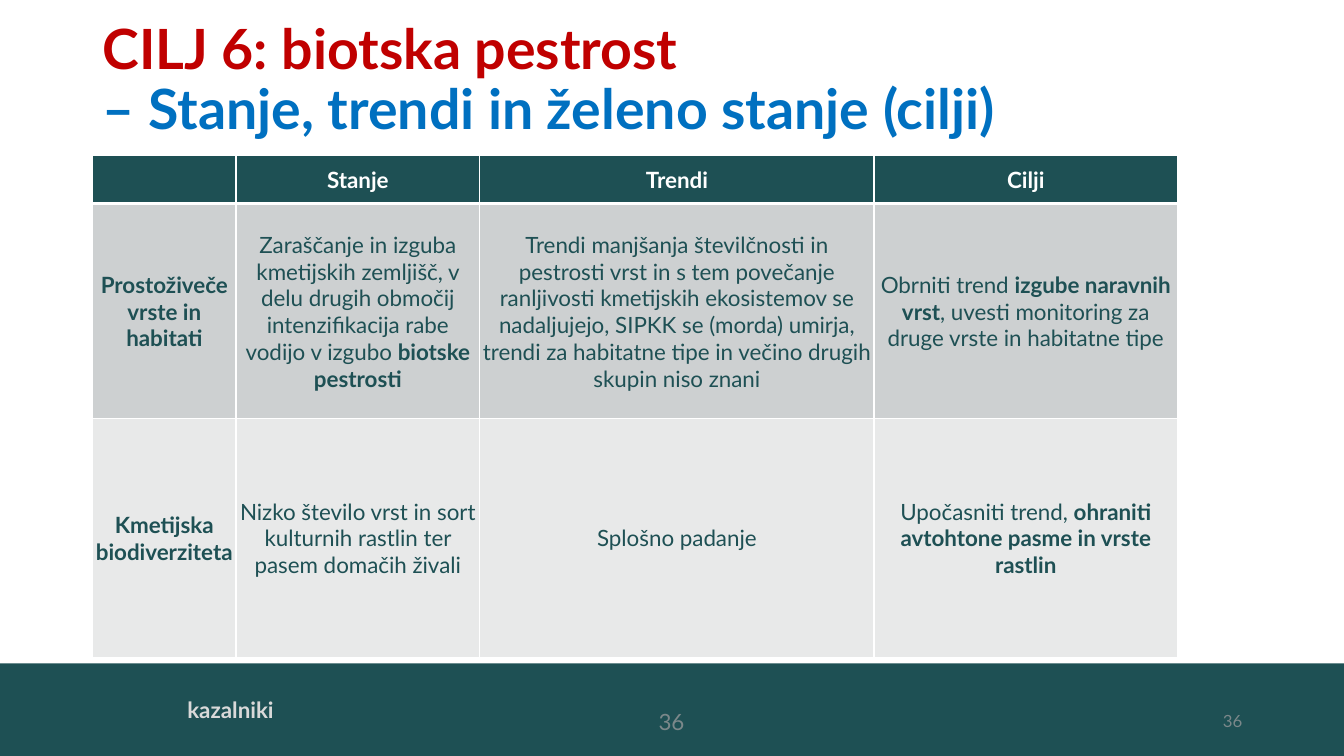
"""Build the slide on biodiversity: state, trends and targets."""
from lxml import etree
from pptx import Presentation
from pptx.dml.color import RGBColor
from pptx.enum.shapes import MSO_SHAPE as SHAPE
from pptx.enum.text import MSO_ANCHOR as ANCHOR, PP_ALIGN as ALIGN
from pptx.oxml.ns import qn
from pptx.util import Inches, Pt

FONT = "Lato"
TEAL, WHITE, GREY = "1E5054", "FFFFFF", "7B888A"
ROW_FILLS = [TEAL, "CDD0D1", "E8E9E9"]
COLS = [1.42, 2.42, 3.91, 3.01]
ROWS = [0.48, 2.13, 2.37]
TITLE = [("CILJ 6: biotska pestrost", "C00000"),
         ("–\u00a0Stanje, trendi in želeno stanje (cilji)", "0070C0")]
B, N = True, False
CELLS = [
    [[], [("Stanje", B)], [("Trendi", B)], [("Cilji", B)]],
    [[("Prostoživeče vrste in habitati", B)],
     [("Zaraščanje in izguba kmetijskih zemljišč, v delu drugih območij "
       "intenzifikacija rabe vodijo v izgubo ", N), ("biotske pestrosti", B)],
     [("Trendi manjšanja številčnosti in pestrosti vrst in s tem povečanje "
       "ranljivosti kmetijskih ekosistemov se nadaljujejo, SIPKK se (morda) "
       "umirja, trendi za habitatne tipe in večino drugih skupin niso znani", N)],
     [("Obrniti trend ", N), ("izgube naravnih vrst", B),
      (", uvesti monitoring za druge vrste in habitatne tipe", N)]],
    [[("Kmetijska biodiverziteta", B)],
     [("Nizko število vrst in sort kulturnih rastlin ter pasem domačih živali", N)],
     [("Splošno padanje", N)],
     [("Upočasniti trend, ", N),
      ("ohraniti avtohtone pasme in vrste rastlin", B)]],
]
LABELS = [
    ("kazalniki", (1.76, 6.86, 9.91, 0.37), 16, "D9D9D9", B, ALIGN.LEFT, ANCHOR.TOP),
    ("36", (5.16, 6.96, 3, 0.4), 16, GREY, N, ALIGN.CENTER, ANCHOR.MIDDLE),
    ("36", (9.42, 6.95, 3, 0.4), 12, GREY, N, ALIGN.RIGHT, ANCHOR.MIDDLE),
]


def rgb(hex_color):
    return RGBColor.from_string(hex_color)


def set_font(font, size, color=None, bold=None):
    font.name, font.size, font.bold = FONT, Pt(size), bold
    if color:
        font.color.rgb = rgb(color)


def add_text(slide, box, anchor):
    tf = slide.shapes.add_textbox(*map(Inches, box)).text_frame
    tf.word_wrap, tf.vertical_anchor = True, anchor
    return tf.paragraphs[0]


def set_borders(cell, widths):
    tcPr = cell._tc.get_or_add_tcPr()
    for i, (side, width) in enumerate(zip("LRTB", widths)):
        ln = etree.Element(qn(f"a:ln{side}"), w=str(Pt(width)))
        fill = etree.SubElement(ln, qn("a:solidFill"))
        etree.SubElement(fill, qn("a:srgbClr"), val=WHITE)
        tcPr.insert(i, ln)


def fill_cell(cell, runs, row):
    cell.fill.solid()
    cell.fill.fore_color.rgb = rgb(ROW_FILLS[row])
    cell.vertical_anchor = ANCHOR.MIDDLE
    cell.margin_left = cell.margin_right = cell.margin_top = Inches(0.01)
    cell.margin_bottom = 0
    set_borders(cell, (1, 1, 3 if row == 1 else 1, 3 if row == 0 else 1))
    p = cell.text_frame.paragraphs[0]
    p.alignment = ALIGN.CENTER
    set_font(p.font, 16, TEAL if row else WHITE)
    for text, bold in runs:
        r = p.add_run()
        r.text, r.font.bold = text, bold


def main():
    prs = Presentation()
    prs.slide_width, prs.slide_height = Inches(13.33), Inches(7.5)
    slide = prs.slides.add_slide(prs.slide_layouts[6])

    band = slide.shapes.add_shape(
        SHAPE.RECTANGLE, 0, Inches(6.58), prs.slide_width, Inches(0.92))
    band.shadow.inherit = False
    band.fill.solid()
    band.fill.fore_color.rgb = rgb(TEAL)
    band.line.fill.background()

    for text, box, size, color, bold, align, anchor in LABELS:
        p = add_text(slide, box, anchor)
        p.text, p.alignment = text, align
        set_font(p.font, size, color, bold)

    p = add_text(slide, (0.92, 0.4, 9.72, 0.81), ANCHOR.MIDDLE)
    p.line_spacing = 0.9
    set_font(p.font, 39.6, bold=True)
    for i, (text, color) in enumerate(TITLE):
        if i:
            p.add_line_break()
        r = p.add_run()
        r.text = text
        set_font(r.font, 39.6, color, True)

    table = slide.shapes.add_table(
        len(ROWS), len(COLS), Inches(0.92), Inches(1.54),
        Inches(sum(COLS)), Inches(sum(ROWS))).table
    for col, width in zip(table.columns, COLS):
        col.width = Inches(width)
    for i, height in enumerate(ROWS):
        table.rows[i].height = Inches(height)
        for j, runs in enumerate(CELLS[i]):
            fill_cell(table.cell(i, j), runs, i)

    prs.save("out.pptx")


if __name__ == "__main__":
    main()
